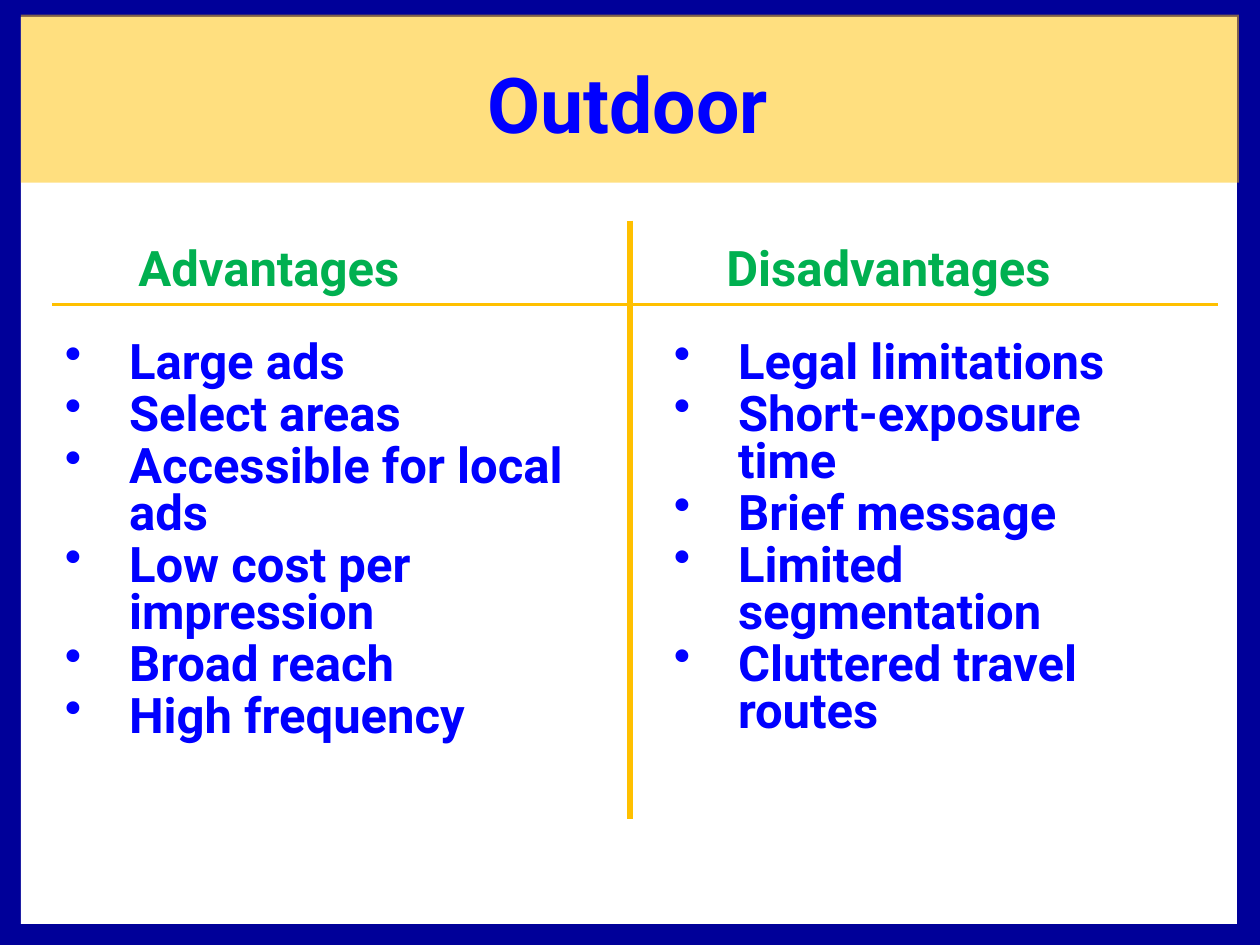
from dataclasses import dataclass

from lxml import etree
from pptx import Presentation, util as u
from pptx.dml.color import RGBColor
from pptx.enum import shapes, text
from pptx.oxml.ns import qn

COLS, ROWS = 120, 90
CELL = u.Inches(10) // COLS


@dataclass(frozen=True)
class Theme:
    """Colours, font and type sizes of the slide."""
    frame: str = "000099"
    paper: str = "FFFFFF"
    gold: str = "FFC000"
    ink: str = "0000FF"
    heading: str = "00B050"
    font: str = "Roboto"
    title_pt: int = 44
    body_pt: int = 28


THEME = Theme()
COLUMNS = [
    ("Advantages", (12, 22, 30, 6.8), (5, 32, 53, 49),
     ["Large ads", "Select areas", "Accessible for local ads",
      "Low cost per impression", "Broad reach", "High frequency"]),
    ("Disadvantages", (68, 22, 37, 6.8), (63, 32, 49, 48),
     ["Legal limitations", "Short-exposure time", "Brief message",
      "Limited segmentation", "Cluttered travel routes"]),
]


def grid(*cells):
    """Turn grid counts into slide lengths."""
    return [u.Emu(round(c * CELL)) for c in cells]


def add_panel(s, box, color, alpha=None):
    """Add a borderless rectangle, optionally with a percentage opacity."""
    sp = s.shapes.add_shape(shapes.MSO_SHAPE.RECTANGLE, *grid(*box))
    sp.shadow.inherit = False
    sp.fill.solid()
    sp.fill.fore_color.rgb = RGBColor.from_string(color)
    sp.line.fill.background()
    if alpha is not None:
        clr = sp._element.spPr.find(".//" + qn("a:srgbClr"))
        etree.SubElement(clr, qn("a:alpha"), val=str(alpha * 1000))


def add_text(s, box, lines, size, color, wrap=True):
    """Add a bold text box with one paragraph per line and return its frame."""
    tf = s.shapes.add_textbox(*grid(*box)).text_frame
    tf.word_wrap = wrap
    tf.text = "\n".join(lines)
    for p in tf.paragraphs:
        p.font.name = THEME.font
        p.font.size = u.Pt(size)
        p.font.bold = True
        p.font.color.rgb = RGBColor.from_string(color)
    return tf


def add_title(s, box, title):
    """Add the centred slide title."""
    tf = add_text(s, box, [title], THEME.title_pt, THEME.ink)
    tf.vertical_anchor = text.MSO_ANCHOR.MIDDLE
    tf.paragraphs[0].alignment = text.PP_ALIGN.CENTER


def add_bullets(s, box, items):
    """Add a bulleted list with a hanging indent."""
    tf = add_text(s, box, items, THEME.body_pt, THEME.ink)
    indent = u.Inches(0.51)
    for p in tf.paragraphs:
        p.line_spacing = 0.8
        p.space_before = u.Pt(THEME.body_pt * 0.1)
        pPr = p._p.get_or_add_pPr()
        pPr.set("marL", str(indent))
        pPr.set("indent", str(-indent))
        bullet = etree.Element(qn("a:buChar"), char="•")
        pPr.find(qn("a:spcBef")).addnext(bullet)


def add_rule(s, ends, width):
    """Add a straight gold line."""
    c = s.shapes.add_connector(shapes.MSO_CONNECTOR.STRAIGHT, *grid(*ends))
    c.line.color.rgb = RGBColor.from_string(THEME.gold)
    c.line.width = u.Pt(width)
    etree.SubElement(c._element.spPr, qn("a:effectLst"))


def main():
    """Build and save the slide."""
    prs = Presentation()
    prs.slide_width, prs.slide_height = grid(COLS, ROWS)
    s = prs.slides.add_slide(prs.slide_layouts[6])
    add_panel(s, (0, 0, COLS, ROWS), THEME.frame)
    add_panel(s, (2, 1.6, 115.8, 86.4), THEME.paper)
    add_panel(s, (2, 1.4, 116, 16), THEME.gold, alpha=50)
    add_title(s, (3.8, 2.8, 112, 14), "Outdoor")
    for heading, heading_box, list_box, items in COLUMNS:
        add_bullets(s, list_box, items)
        add_text(s, heading_box, [heading], THEME.body_pt, THEME.heading, wrap=False)
    add_rule(s, (60, 21, 60, 78), 3)
    add_rule(s, (5, 29, 116, 29), 2.25)
    prs.save("out.pptx")


if __name__ == "__main__":
    main()
